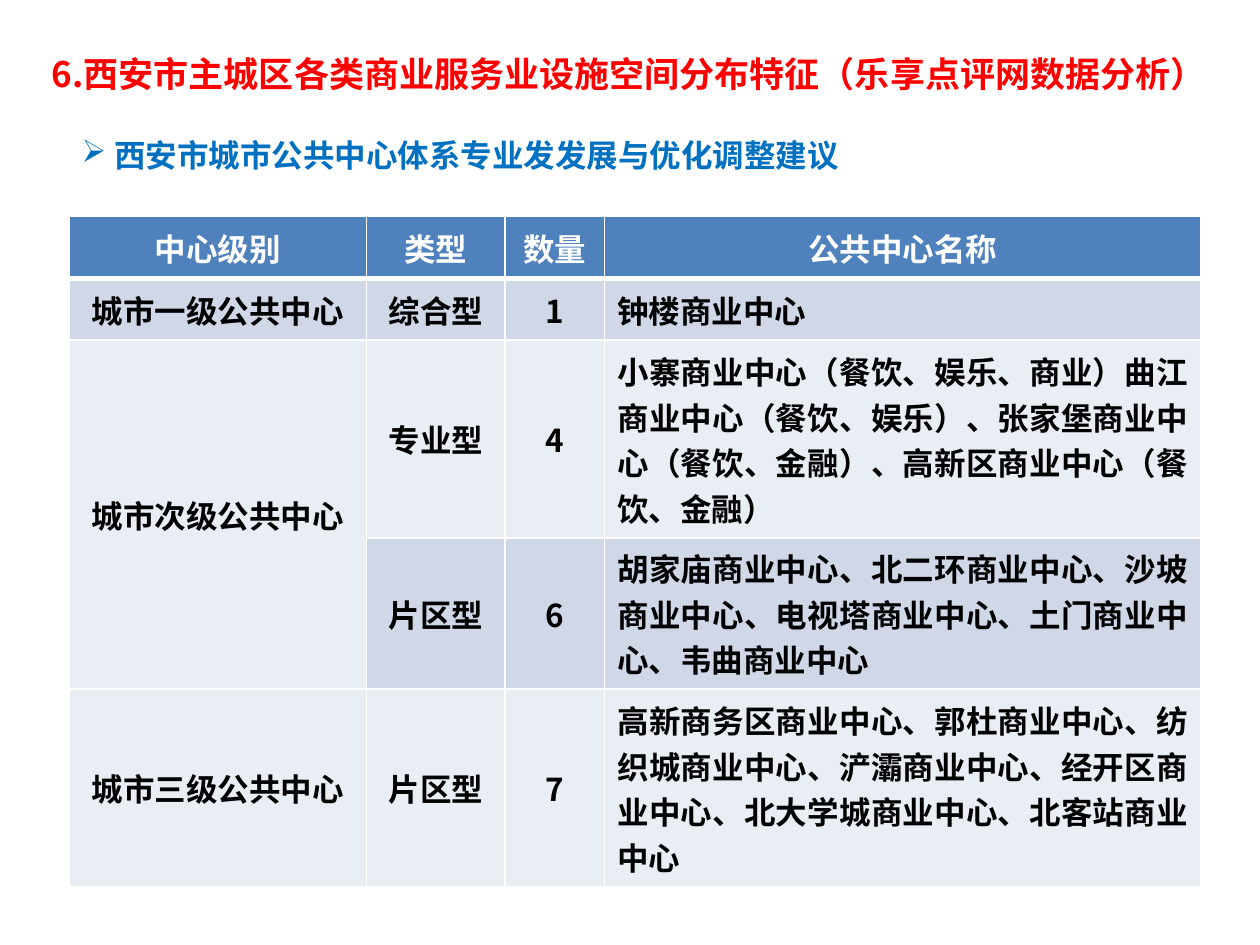
from lxml import etree
from pptx import Presentation
from pptx.dml.color import RGBColor
from pptx.enum.text import MSO_ANCHOR, PP_ALIGN
from pptx.oxml.ns import qn
from pptx.util import Inches, Pt

FONT = "Noto Sans CJK SC"
COLORS = {
    "title": "FF0000",
    "subtitle": "0070C0",
    "header": "4F81BD",
    "band": "D0D8E8",
    "pale": "E9EDF4",
    "white": "FFFFFF",
    "black": "000000",
}
COLUMN_WIDTHS = [2.36, 1.1, 0.79, 4.73]
ROW_HEIGHTS = [0.49, 0.49, 1.57, 1.2, 1.57]
ROW_FILLS = ["header", "band", "pale", "band", "pale"]
CENTERS = [
    ["中心级别", "类型", "数量", "公共中心名称"],
    ["城市一级公共中心", "综合型", "1", "钟楼商业中心"],
    ["城市次级公共中心", "专业型", "4",
     "小寨商业中心（餐饮、娱乐、商业）曲江商业中心（餐饮、娱乐）、"
     "张家堡商业中心（餐饮、金融）、高新区商业中心（餐饮、金融）"],
    ["", "片区型", "6",
     "胡家庙商业中心、北二环商业中心、沙坡商业中心、"
     "电视塔商业中心、土门商业中心、韦曲商业中心"],
    ["城市三级公共中心", "片区型", "7",
     "高新商务区商业中心、郭杜商业中心、纺织城商业中心、浐灞商业中心、"
     "经开区商业中心、北大学城商业中心、北客站商业中心"],
]


def rgb(name):
    return RGBColor.from_string(COLORS[name])


def style(paragraph, size, color, align=PP_ALIGN.LEFT):
    paragraph.alignment = align
    font = paragraph.font
    font.name, font.size, font.bold = FONT, Pt(size), True
    font.color.rgb = rgb(color)
    # Chinese characters take their typeface from a:ea
    etree.SubElement(font._element, qn("a:ea"), typeface=FONT)


def add_borders(cell, top, bottom):
    """Draw white cell borders, with top and bottom widths in points."""
    properties = cell._tc.get_or_add_tcPr()
    sides = [("a:lnL", 1), ("a:lnR", 1), ("a:lnT", top), ("a:lnB", bottom)]
    for index, (tag, width) in enumerate(sides):
        line = etree.Element(qn(tag), w=str(Pt(width)))
        fill = etree.SubElement(line, qn("a:solidFill"))
        etree.SubElement(fill, qn("a:srgbClr"), val=COLORS["white"])
        properties.insert(index, line)


def place_title(slide, left, top, width, height):
    title = slide.shapes.title
    title.left, title.top, title.width, title.height = map(
        Inches, (left, top, width, height))
    frame = title.text_frame
    frame.text = "6.西安市主城区各类商业服务业设施空间分布特征（乐享点评网数据分析）"
    frame.word_wrap = True
    frame.vertical_anchor = MSO_ANCHOR.TOP
    frame.margin_top = Inches(0.08)
    heading = frame.paragraphs[0]
    heading.line_spacing = 0.83
    style(heading, 20, "title")


def add_subtitle(slide, left, top, width, height):
    box = slide.shapes.add_textbox(*map(Inches, (left, top, width, height)))
    frame = box.text_frame
    frame.word_wrap = True
    subtitle = frame.paragraphs[0]
    subtitle.text = "西安市城市公共中心体系专业发发展与优化调整建议"
    subtitle.line_spacing = 1.3
    properties = subtitle._p.get_or_add_pPr()
    indent = Inches(0.26)
    properties.set("marL", str(indent))
    properties.set("indent", str(-indent))
    etree.SubElement(properties, qn("a:buChar"), char="➢")
    style(subtitle, 18, "subtitle")


def add_centers_table(slide, left, top):
    size = sum(COLUMN_WIDTHS), sum(ROW_HEIGHTS)
    table = slide.shapes.add_table(
        len(ROW_HEIGHTS), len(COLUMN_WIDTHS),
        *map(Inches, (left, top, *size))).table
    table.horz_banding = False
    for column, width in zip(table.columns, COLUMN_WIDTHS):
        column.width = Inches(width)
    for row, height in zip(table.rows, ROW_HEIGHTS):
        row.height = Inches(height)

    last_column = len(COLUMN_WIDTHS) - 1
    for r, texts in enumerate(CENTERS):
        for c, text in enumerate(texts):
            cell = table.cell(r, c)
            cell.text = text
            cell.vertical_anchor = MSO_ANCHOR.MIDDLE
            cell.fill.solid()
            cell.fill.fore_color.rgb = rgb(ROW_FILLS[r])
            add_borders(cell, top=3 if r == 1 else 1, bottom=3 if r == 0 else 1)
            is_name = r > 0 and c == last_column
            style(cell.text_frame.paragraphs[0], 18,
                  "white" if r == 0 else "black",
                  PP_ALIGN.JUSTIFY if is_name else PP_ALIGN.CENTER)
    table.cell(2, 0).merge(table.cell(3, 0))


def main():
    presentation = Presentation()
    presentation.slide_width = Inches(10)
    presentation.slide_height = Inches(7.5)
    slide = presentation.slides.add_slide(presentation.slide_layouts[5])
    add_centers_table(slide, 0.55, 1.72)
    place_title(slide, 0.31, 0.39, 9.38, 0.44)
    add_subtitle(slide, 0.55, 0.94, 6.8, 0.56)
    presentation.save("out.pptx")


if __name__ == "__main__":
    main()
